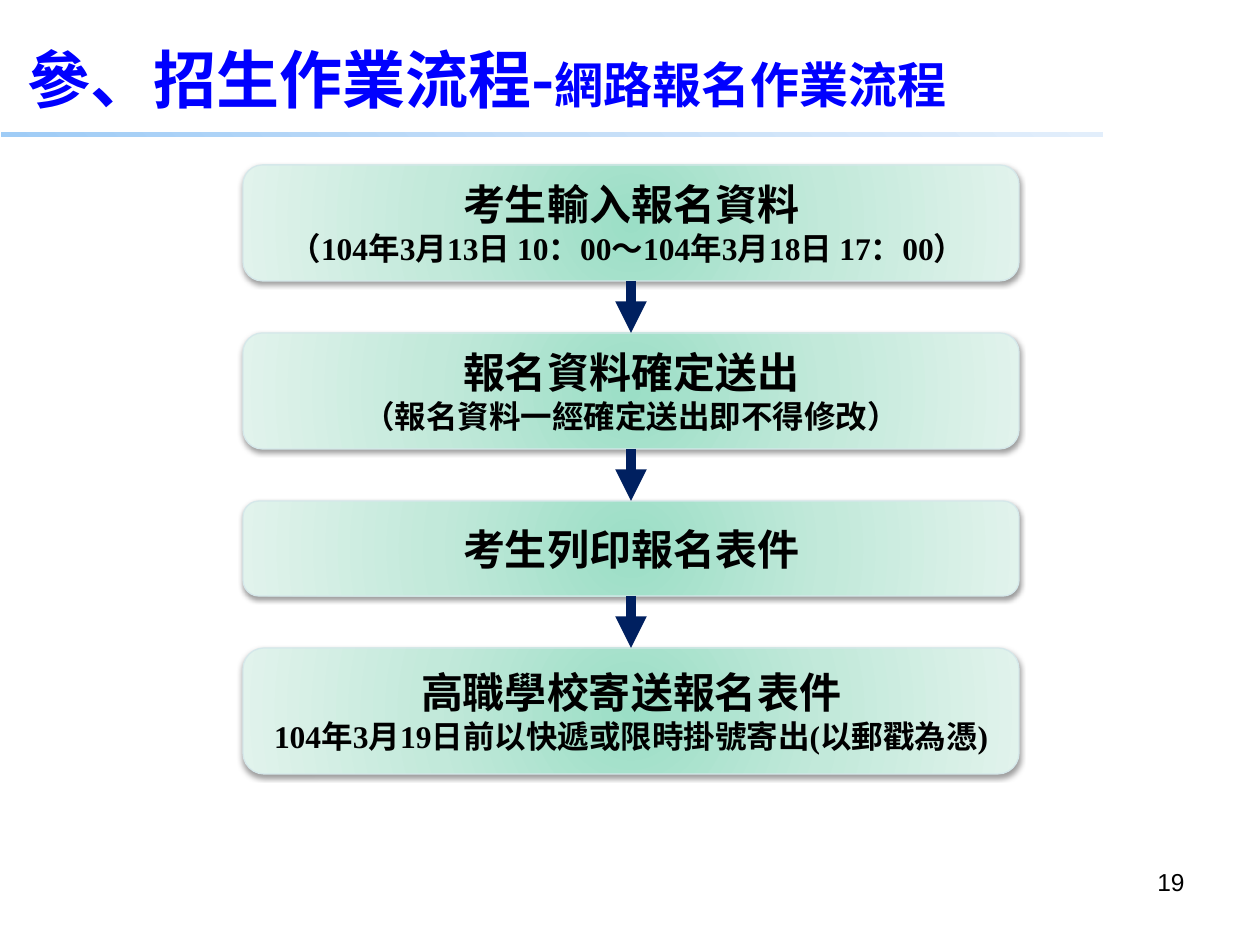
from lxml import etree
from pptx import Presentation
from pptx.dml.color import RGBColor
from pptx.enum.shapes import MSO_CONNECTOR, MSO_SHAPE
from pptx.enum.text import MSO_ANCHOR, PP_ALIGN
from pptx.oxml import parse_xml
from pptx.oxml.ns import nsdecls, qn
from pptx.util import Pt

RECTANGLE = MSO_SHAPE.RECTANGLE
STEP_SHAPE = MSO_SHAPE.FLOWCHART_ALTERNATE_PROCESS
STRAIGHT = MSO_CONNECTOR.STRAIGHT
MIDDLE = MSO_ANCHOR.MIDDLE
CENTER, RIGHT = PP_ALIGN.CENTER, PP_ALIGN.RIGHT
BOTTOM_SITE, TOP_SITE = 2, 0

EMU_PER_PX = 914400 / 126
COLORS = {
    "title": "0000FF",
    "text": "000000",
    "arrow": "002060",
    "outline": "D5E8EA",
    "shadow": "000000",
}
BAR_GRADIENT = ("9FCCF6", "C4DEF8", "E2EEFB")
STEP_GRADIENT = ("9BDEC6", "C2E9DA", "E1F3EC")
BAR_DIRECTION = '<a:lin ang="18900000" scaled="0"/>'
STEP_DIRECTION = (
    '<a:path path="circle">'
    '<a:fillToRect l="50000" t="50000" r="50000" b="50000"/></a:path>'
)
STEP_GAP = 52
STEPS = [
    (116, ["考生輸入報名資料", "（104年3月13日 10：00～104年3月18日 17：00） "]),
    (116, ["報名資料確定送出", "（報名資料一經確定送出即不得修改）"]),
    (95, ["考生列印報名表件"]),
    (126, ["高職學校寄送報名表件", "104年3月19日前以快遞或限時掛號寄出(以郵戳為憑)"]),
]


def px(*lengths):
    """Turn pixel lengths into EMU."""
    return [round(length * EMU_PER_PX) for length in lengths]


def color(name):
    """Return the named colour."""
    return RGBColor.from_string(COLORS[name])


def style_font(font, name, color_name, size=None, bold=False):
    """Set the typeface, colour, size and weight of a font."""
    font.name = name
    font.color.rgb = color(color_name)
    font.bold = bold
    if size:
        font.size = Pt(size)


def fill_gradient(shape, colors, direction):
    """Fill a shape with three evenly spaced colours."""
    stops = "".join(
        f'<a:gs pos="{index * 50000}"><a:srgbClr val="{value}"/></a:gs>'
        for index, value in enumerate(colors)
    )
    gradient = parse_xml(
        f'<a:gradFill {nsdecls("a")} rotWithShape="1">'
        f"<a:gsLst>{stops}</a:gsLst>{direction}</a:gradFill>"
    )
    shape._element.spPr.find(qn("a:prstGeom")).addnext(gradient)


def add_shadow(shape):
    """Give a shape a soft shadow straight below it."""
    shape.shadow.inherit = False
    shadow = parse_xml(
        f'<a:outerShdw {nsdecls("a")} blurRad="{Pt(3.1)}" dist="{Pt(1.6)}" '
        f'dir="5400000" rotWithShape="0"><a:srgbClr val="{COLORS["shadow"]}">'
        '<a:alpha val="38000"/></a:srgbClr></a:outerShdw>'
    )
    shape._element.spPr.find(qn("a:effectLst")).append(shadow)


def add_title(slide, left, top, width, height):
    """Add the two-part title with the gradient bar under it."""
    bar = slide.shapes.add_shape(RECTANGLE, *px(left, top + height - 5, width, 5))
    bar.shadow.inherit = False
    bar.line.fill.background()
    fill_gradient(bar, BAR_GRADIENT, BAR_DIRECTION)

    box = slide.shapes.add_textbox(*px(left + 14, top, width - 11, height - 15))
    frame = box.text_frame
    frame.word_wrap = True
    frame.vertical_anchor = MIDDLE
    paragraph = frame.paragraphs[0]
    style_font(paragraph.font, "Noto Sans CJK SC", "title", bold=True)
    for text, size in (("參、招生作業流程-", 36), ("網路報名作業流程", 28)):
        run = paragraph.add_run()
        run.text = text
        run.font.size = Pt(size)


def add_step(slide, left, top, width, height, lines):
    """Add one step box with a heading and an optional detail line."""
    step = slide.shapes.add_shape(STEP_SHAPE, *px(left, top, width, height))
    fill_gradient(step, STEP_GRADIENT, STEP_DIRECTION)
    step.line.color.rgb = color("outline")
    step.line.width = Pt(0.75)
    add_shadow(step)
    frame = step.text_frame
    frame.word_wrap = False
    frame.vertical_anchor = MIDDLE
    frame.text = "\n".join(lines)
    for paragraph, size in zip(frame.paragraphs, (24, 18)):
        paragraph.alignment = CENTER
        style_font(paragraph.font, "Times New Roman", "text", size, True)
    return step


def add_arrow(slide, upper, lower):
    """Join two steps with a downward arrow."""
    arrow = slide.shapes.add_connector(STRAIGHT, 0, 0, 0, 0)
    arrow.begin_connect(upper, BOTTOM_SITE)
    arrow.end_connect(lower, TOP_SITE)
    arrow.line.color.rgb = color("arrow")
    arrow.line.width = Pt(6)
    etree.SubElement(arrow.line._get_or_add_ln(), qn("a:tailEnd"), type="triangle")
    etree.SubElement(arrow._element.spPr, qn("a:effectLst"))


def add_flow(slide, left, top, width):
    """Stack the steps with equal gaps and link them."""
    boxes = []
    for height, lines in STEPS:
        boxes.append(add_step(slide, left, top, width, height, lines))
        top += height + STEP_GAP
    for upper, lower in zip(boxes, boxes[1:]):
        add_arrow(slide, upper, lower)


def add_page_number(slide, left, top, width, height):
    """Add the right-aligned page number."""
    frame = slide.shapes.add_textbox(*px(left, top, width, height)).text_frame
    frame.word_wrap = True
    paragraph = frame.paragraphs[0]
    paragraph.text = "19"
    paragraph.alignment = RIGHT
    style_font(paragraph.font, "Arial", "text", 14)


def main():
    """Build the slide and save it."""
    presentation = Presentation()
    presentation.slide_width, presentation.slide_height = px(1260, 945)
    slide = presentation.slides.add_slide(presentation.slide_layouts[6])
    add_title(slide, 1, 35, 1102, 102)
    add_flow(slide, 243, 165, 776)
    add_page_number(slide, 903, 861, 294, 66)
    presentation.save("out.pptx")


if __name__ == "__main__":
    main()
